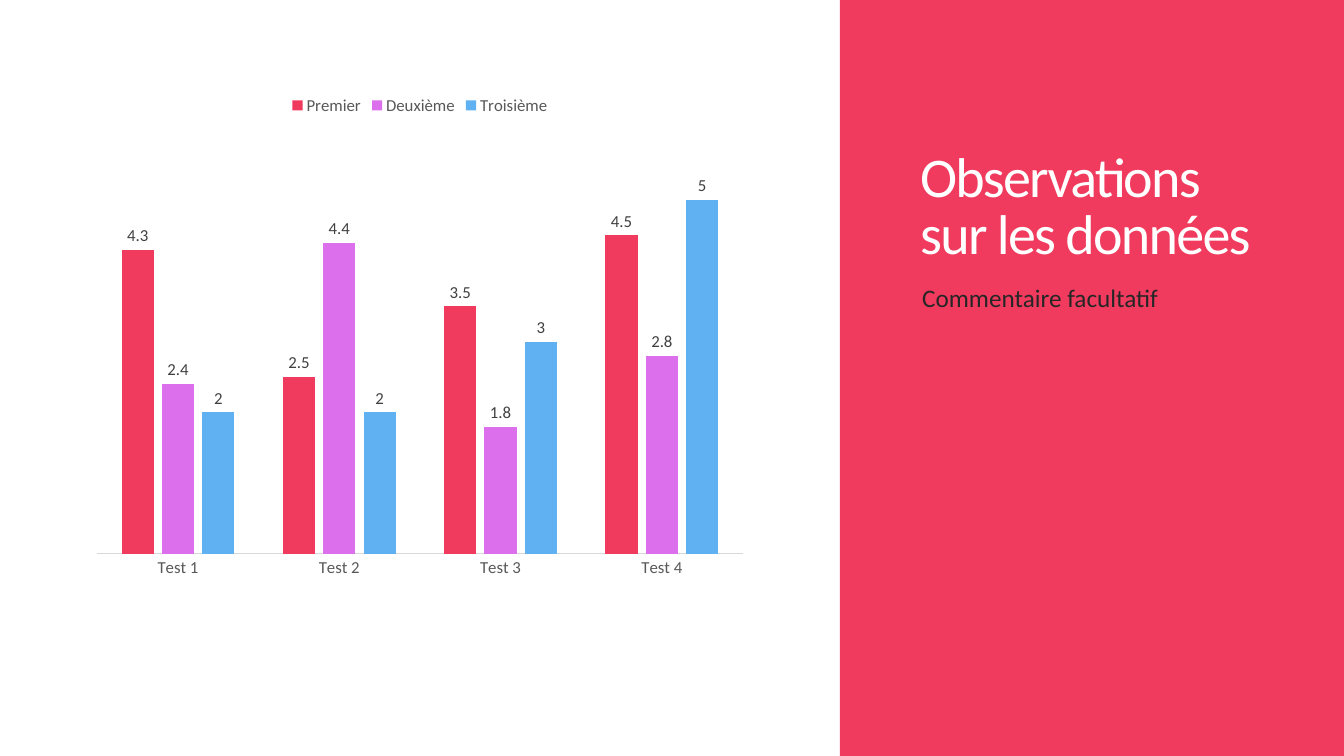
import pptx
import pptx.chart.data
import pptx.dml.color
import pptx.enum.chart
import pptx.enum.shapes
import pptx.enum.text
import pptx.util
from pptx.util import Pt

FONT = "Calibri"
COLORS = {
    "accent": "F03B5E",
    "violet": "DC6FEC",
    "blue": "60B1F2",
    "white": "FFFFFF",
    "body": "262626",
    "label": "404040",
    "axis_text": "595959",
    "axis_line": "D9D9D9",
}
TESTS = ["Test 1", "Test 2", "Test 3", "Test 4"]
SERIES = [
    ("Premier", [4.3, 2.5, 3.5, 4.5], "accent"),
    ("Deuxième", [2.4, 4.4, 1.8, 2.8], "violet"),
    ("Troisième", [2, 2, 3, 5], "blue"),
]


def rgb(name):
    return pptx.dml.color.RGBColor.from_string(COLORS[name])


def set_all(target, values):
    for name, value in values.items():
        setattr(target, name, value)


def style_font(font, size, color):
    set_all(font, {"name": FONT, "size": Pt(size), "bold": False})
    font.color.rgb = rgb(color)


def fill_solid(fill, color):
    fill.solid()
    fill.fore_color.rgb = rgb(color)


def place(shape, left, top, width, height):
    set_all(shape, {"left": Pt(left), "top": Pt(top),
                    "width": Pt(width), "height": Pt(height)})


def add_panel(page, left, top, width, height, color):
    panel = page.shapes.add_shape(pptx.enum.shapes.MSO_SHAPE.RECTANGLE,
                                  Pt(left), Pt(top), Pt(width), Pt(height))
    panel.shadow.inherit = False
    fill_solid(panel.fill, color)
    panel.line.fill.background()
    return panel


def write_placeholder(box, text, size, color, anchor, para_format):
    set_all(box.text_frame, {"word_wrap": True, "vertical_anchor": anchor,
                             "auto_size": pptx.enum.text.MSO_AUTO_SIZE.NONE})
    para = box.text_frame.paragraphs[0]
    set_all(para, {"alignment": pptx.enum.text.PP_ALIGN.LEFT, **para_format})
    span = para.add_run()
    span.text = text
    style_font(span.font, size, color)
    return para, span


def remove_bullet(para):
    properties = para._p.get_or_add_pPr()
    properties.set("marL", "0")
    properties.set("indent", "0")
    properties.append(pptx.oxml.xmlchemy.OxmlElement("a:buNone"))


def style_axes(chart):
    tick_none = pptx.enum.chart.XL_TICK_MARK.NONE
    tests = chart.category_axis
    set_all(tests, {"major_tick_mark": tick_none, "minor_tick_mark": tick_none,
                    "has_major_gridlines": False})
    style_font(tests.tick_labels.font, 12, "axis_text")
    tests.format.line.width = Pt(0.75)
    tests.format.line.color.rgb = rgb("axis_line")
    set_all(chart.value_axis, {"visible": False, "has_major_gridlines": False,
                               "minimum_scale": 0, "maximum_scale": 6})


def style_series(series, color):
    fill_solid(series.format.fill, color)
    series.invert_if_negative = False
    labels = series.data_labels
    set_all(labels, {
        "show_value": True,
        "position": pptx.enum.chart.XL_LABEL_POSITION.OUTSIDE_END,
    })
    style_font(labels.font, 12, "label")


def add_column_chart(page, left, top, width, height):
    data = pptx.chart.data.CategoryChartData()
    data.categories = TESTS
    for name, values, _ in SERIES:
        data.add_series(name, values)
    chart = page.shapes.add_chart(
        pptx.enum.chart.XL_CHART_TYPE.COLUMN_CLUSTERED,
        Pt(left), Pt(top), Pt(width), Pt(height), data).chart
    set_all(chart, {"has_title": False, "has_legend": True})
    set_all(chart.font, {"name": FONT, "size": Pt(10)})
    set_all(chart.legend, {
        "position": pptx.enum.chart.XL_LEGEND_POSITION.TOP,
        "include_in_layout": False,
    })
    style_font(chart.legend.font, 12, "axis_text")
    style_axes(chart)
    plot = chart.plots[0]
    set_all(plot, {"gap_width": 150, "overlap": -25,
                   "vary_by_categories": False})
    for series, (_, _, color) in zip(plot.series, SERIES):
        style_series(series, color)


def main():
    deck = pptx.Presentation()
    set_all(deck, {"slide_width": Pt(960), "slide_height": Pt(540)})
    page = deck.slides.add_slide(deck.slide_layouts[1])
    title, body = page.shapes.title, page.placeholders[1]

    # Coloured side panel, behind the text
    panel = add_panel(page, 600, 0, 360, 540, "accent")
    title.element.addprevious(panel.element)

    # Title
    place(title, 650, 42.5, 266.5, 151)
    _, span = write_placeholder(
        title, "Observations sur les données", 40, "white",
        pptx.enum.text.MSO_ANCHOR.BOTTOM, {"line_spacing": 0.85})
    span.font._element.set("spc", "-120")

    # Comment
    place(body, 651.5, 198, 268, 246)
    para, _ = write_placeholder(
        body, "Commentaire facultatif", 18, "body",
        pptx.enum.text.MSO_ANCHOR.TOP, {"space_before": Pt(12)})
    remove_bullet(para)

    # Test results
    add_column_chart(page, 60, 60, 480, 360)

    deck.save("out.pptx")


if __name__ == "__main__":
    main()
